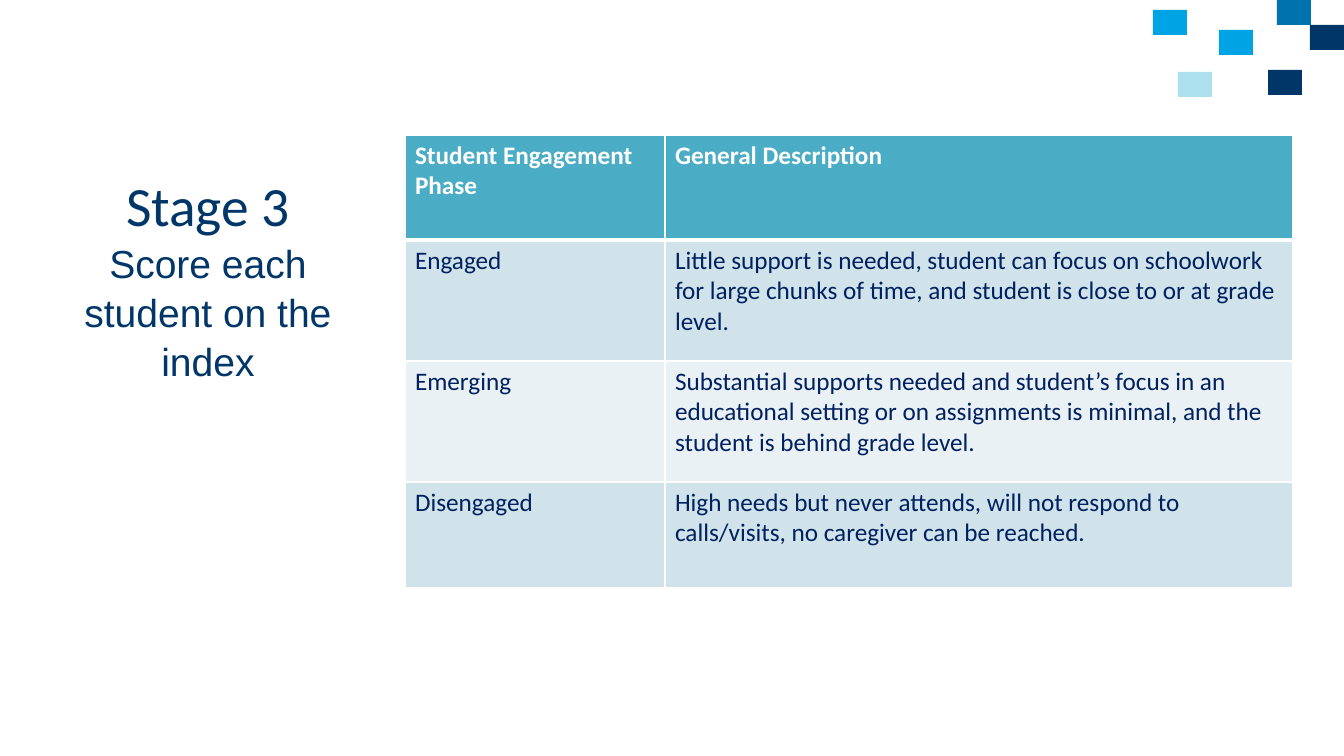
from dataclasses import dataclass

from lxml.etree import SubElement
from pptx import Presentation
from pptx.dml.color import RGBColor
from pptx.enum.shapes import MSO_SHAPE
from pptx.enum.text import MSO_ANCHOR, PP_ALIGN
from pptx.oxml.ns import qn
from pptx.slide import Slide
from pptx.table import _Cell
from pptx.text.text import TextFrame
from pptx.util import Emu, Pt

COLORS = {
    "white": "FFFFFF", "sky": "00A4E4", "navy": "003768", "blue": "0073AE",
    "pale": "ADE0EE", "teal": "4BACC6", "ink": "002060",
    "band": "D0E3EA", "light": "E9F1F5",
}
SCALE = 914400 / 100.8
TILE = (34, 25)
COLS = (260, 628)
ROWS = (105, 121, 121, 106)


@dataclass
class Tile:
    left: int
    top: int
    color: str


@dataclass
class Phase:
    name: str
    about: str
    fill: str
    color: str = "ink"
    bold: bool = False


TILES = [
    Tile(1153, 10, "sky"), Tile(1310, 25, "navy"), Tile(1277, 0, "blue"),
    Tile(1178, 72, "pale"), Tile(1219, 30, "sky"), Tile(1268, 70, "navy"),
]
PHASES = [
    Phase("Student Engagement Phase", "General Description", "teal", "white", True),
    Phase("Engaged", "Little support is needed, student can focus on schoolwork "
          "for large chunks of time, and student is close to or at grade level.", "band"),
    Phase("Emerging", "Substantial supports needed and student’s focus in an "
          "educational setting or on assignments is minimal, and the student is "
          "behind grade level.", "light"),
    Phase("Disengaged", "High needs but never attends, will not respond to "
          "calls/visits, no caregiver can be reached.", "band"),
]


def px(count: int) -> Emu:
    return Emu(round(count * SCALE))


def rgb(name: str) -> RGBColor:
    return RGBColor.from_string(COLORS[name])


def write(frame: TextFrame, text: str, *, size: float = 18, font: str = "Calibri",
          color: str = "ink", bold: bool = False) -> None:
    """Add a run to the first paragraph of the frame."""
    run = frame.paragraphs[0].add_run()
    run.text = text
    run.font.size = Pt(size)
    run.font.name = font
    run.font.bold = bold
    run.font.color.rgb = rgb(color)


def edge(cell: _Cell, head: bool) -> None:
    """Give the cell white borders, with a thick one below the head row."""
    props = cell._tc.get_or_add_tcPr()
    for spot, side in enumerate(("lnL", "lnR", "lnT", "lnB")):
        width = Pt(3 if head and side == "lnB" else 1)
        line = props.makeelement(qn(f"a:{side}"), {"w": str(width)})
        fill = SubElement(line, qn("a:solidFill"))
        SubElement(fill, qn("a:srgbClr"), val=COLORS["white"])
        props.insert(spot, line)


def draw_tile(slide: Slide, tile: Tile) -> None:
    shape = slide.shapes.add_shape(MSO_SHAPE.RECTANGLE, px(tile.left), px(tile.top),
                                   px(TILE[0]), px(TILE[1]))
    shape.shadow.inherit = False
    shape.fill.solid()
    shape.fill.fore_color.rgb = rgb(tile.color)
    shape.line.fill.background()


def draw_title(slide: Slide) -> None:
    frame = slide.shapes.add_textbox(px(51), px(227), px(314), px(98)).text_frame
    frame.word_wrap = True
    frame.vertical_anchor = MSO_ANCHOR.MIDDLE
    title = frame.paragraphs[0]
    title.alignment = PP_ALIGN.CENTER
    title.line_spacing = 1.05
    write(frame, "Stage 3", size=39.6, color="navy")
    title.add_line_break()
    write(frame, "Score each student on the index", size=27.9, font="Arial", color="navy")


def draw_table(slide: Slide) -> None:
    table = slide.shapes.add_table(len(ROWS), len(COLS), px(405), px(135),
                                   px(sum(COLS)), px(sum(ROWS))).table
    for col, width in zip(table.columns, COLS):
        col.width = px(width)
    for row, height, phase in zip(table.rows, ROWS, PHASES):
        row.height = px(height)
        for cell, text in zip(row.cells, (phase.name, phase.about)):
            cell.fill.solid()
            cell.fill.fore_color.rgb = rgb(phase.fill)
            edge(cell, phase.bold)
            write(cell.text_frame, text, color=phase.color, bold=phase.bold)


def main() -> None:
    deck = Presentation()
    deck.slide_width, deck.slide_height = px(1344), px(756)
    slide = deck.slides.add_slide(deck.slide_layouts[6])
    for tile in TILES:
        draw_tile(slide, tile)
    draw_title(slide)
    draw_table(slide)
    deck.save("out.pptx")


if __name__ == "__main__":
    main()
